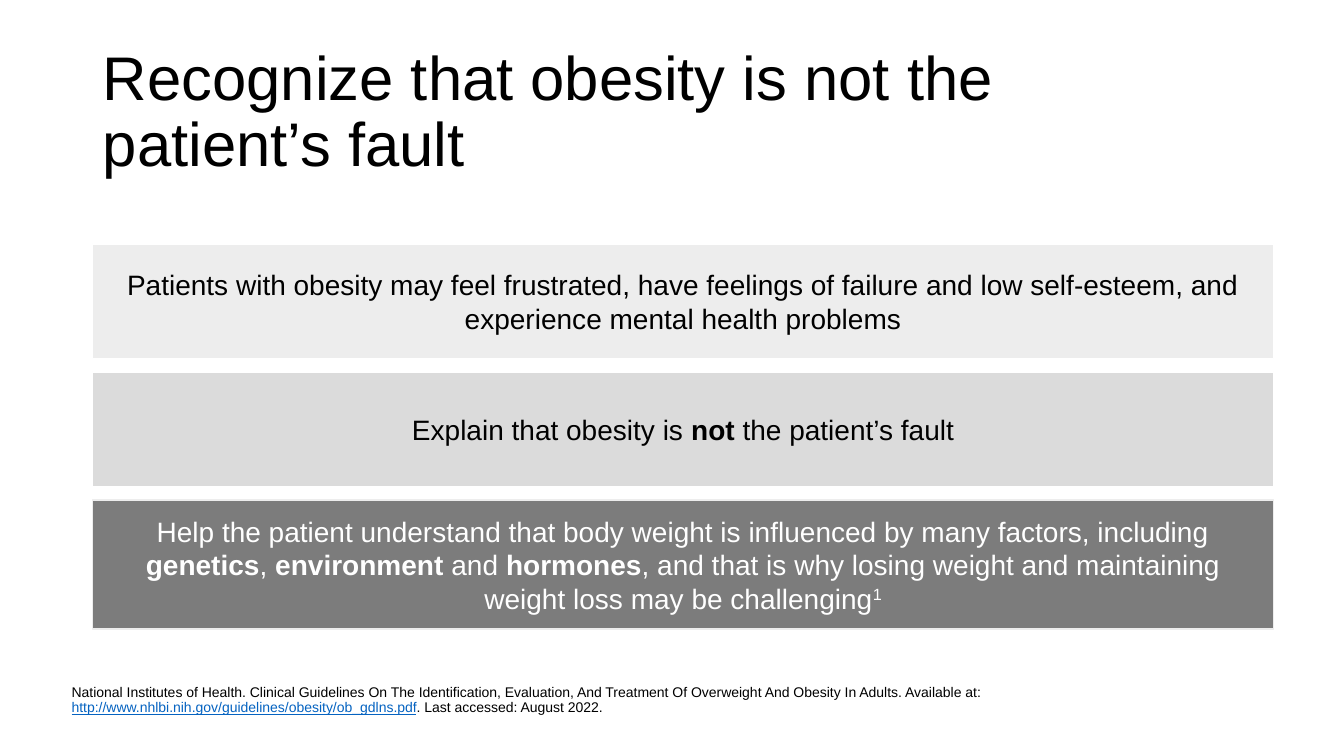
from dataclasses import dataclass

from lxml import etree
from pptx import Presentation
from pptx import util as u
from pptx.dml.color import RGBColor
from pptx.enum import shapes, text
from pptx.oxml.ns import qn


@dataclass
class Theme:
    face: str = "Arial"
    black: str = "000000"
    white: str = "FFFFFF"
    pale: str = "EDEDED"
    light: str = "DBDBDB"
    dark: str = "7C7C7C"
    link: str = "0563C1"
    head: int = 44
    band: int = 20
    note: int = 10


class Page:
    def __init__(self, deck, theme):
        self.theme = theme
        self.slide = deck.slides.add_slide(deck.slide_layouts[1])

    def place(self, shape, box):
        shape.left, shape.top, shape.width, shape.height = map(u.Inches, box)

    def label(self, frame, parts, size, color, align, anchor):
        frame.word_wrap = True
        frame.auto_size = text.MSO_AUTO_SIZE.NONE
        frame.vertical_anchor = anchor
        para = frame.paragraphs[0]
        para.alignment = align
        para.font.name = self.theme.face
        para.font.size = u.Pt(size)
        para.font.color.rgb = RGBColor.from_string(color)
        for words, style in parts:
            run = para.add_run()
            run.text = words
            if style == "bold":
                run.font.bold = True
            elif style == "super":
                run.font._element.set("baseline", "30000")
            elif style == "link":
                run.font.underline = True
                run.font.color.rgb = RGBColor.from_string(self.theme.link)
        return para

    def title(self, lines, box):
        shape = self.slide.shapes.title
        self.place(shape, box)
        first, *rest = lines
        para = self.label(shape.text_frame, [(first, "")], self.theme.head,
                          self.theme.black, text.PP_ALIGN.LEFT,
                          text.MSO_ANCHOR.MIDDLE)
        para.line_spacing = 0.9
        for line in rest:
            para.add_line_break()
            para.add_run().text = line

    def note(self, parts, box):
        shape = self.slide.placeholders[1]
        self.place(shape, box)
        frame = shape.text_frame
        frame.margin_left = frame.margin_right = 0
        frame.margin_top = frame.margin_bottom = 0
        para = self.label(frame, parts, self.theme.note, self.theme.black,
                          text.PP_ALIGN.LEFT, text.MSO_ANCHOR.BOTTOM)
        para.line_spacing = 0.9
        para.space_before = u.Pt(10)
        props = para._p.get_or_add_pPr()
        props.set("marL", "0")
        props.set("indent", "0")
        props.find(qn("a:defRPr")).addprevious(
            etree.Element(qn("a:buNone")))

    def band(self, parts, box, fill, line, color):
        shape = self.slide.shapes.add_shape(
            shapes.MSO_SHAPE.RECTANGLE, *map(u.Inches, box))
        shape.shadow.inherit = False
        shape.fill.solid()
        shape.fill.fore_color.rgb = RGBColor.from_string(fill)
        shape.line.color.rgb = RGBColor.from_string(line)
        shape.line.width = u.Pt(1)
        self.label(shape.text_frame, parts, self.theme.band, color,
                   text.PP_ALIGN.CENTER, text.MSO_ANCHOR.MIDDLE)


def main():
    deck = Presentation()
    deck.slide_width, deck.slide_height = u.Inches(13.33), u.Inches(7.5)
    theme = Theme()
    page = Page(deck, theme)
    page.title(["Recognize that obesity is not the ", "patient’s fault"],
               (0.92, 0.4, 11.5, 1.45))
    page.note([
        ("National Institutes of Health. Clinical Guidelines On The "
         "Identification, Evaluation, And Treatment Of Overweight And "
         "Obesity In Adults. Available at: ", ""),
        ("http://www.nhlbi.nih.gov/guidelines/obesity/ob_gdlns.pdf", "link"),
        (". Last accessed: August 2022.", ""),
    ], (0.71, 6.79, 11.71, 0.31))

    feel = [("Patients with obesity may feel frustrated, have feelings of "
             "failure and low self-esteem, and experience mental health "
             "problems", "")]
    fault = [("Explain that obesity is ", ""), ("not", "bold"),
             (" the patient’s fault", "")]
    causes = [
        ("Help the patient understand that body weight is influenced by "
         "many factors, including ", ""),
        ("genetics", "bold"), (", ", ""), ("environment", "bold"),
        (" and ", ""), ("hormones", "bold"),
        (", and that is why losing weight and maintaining weight loss "
         "may be challenging", ""),
        ("1", "super"),
    ]
    bands = [
        (feel, 1.14, theme.pale, theme.white, theme.black),
        (fault, 1.14, theme.light, theme.white, theme.black),
        (causes, 1.28, theme.dark, theme.pale, theme.white),
    ]
    top, gap = 2.42, 0.13
    for parts, high, fill, line, color in bands:
        page.band(parts, (0.92, top, 11.71, high), fill, line, color)
        top += high + gap
    deck.save("out.pptx")


if __name__ == "__main__":
    main()
